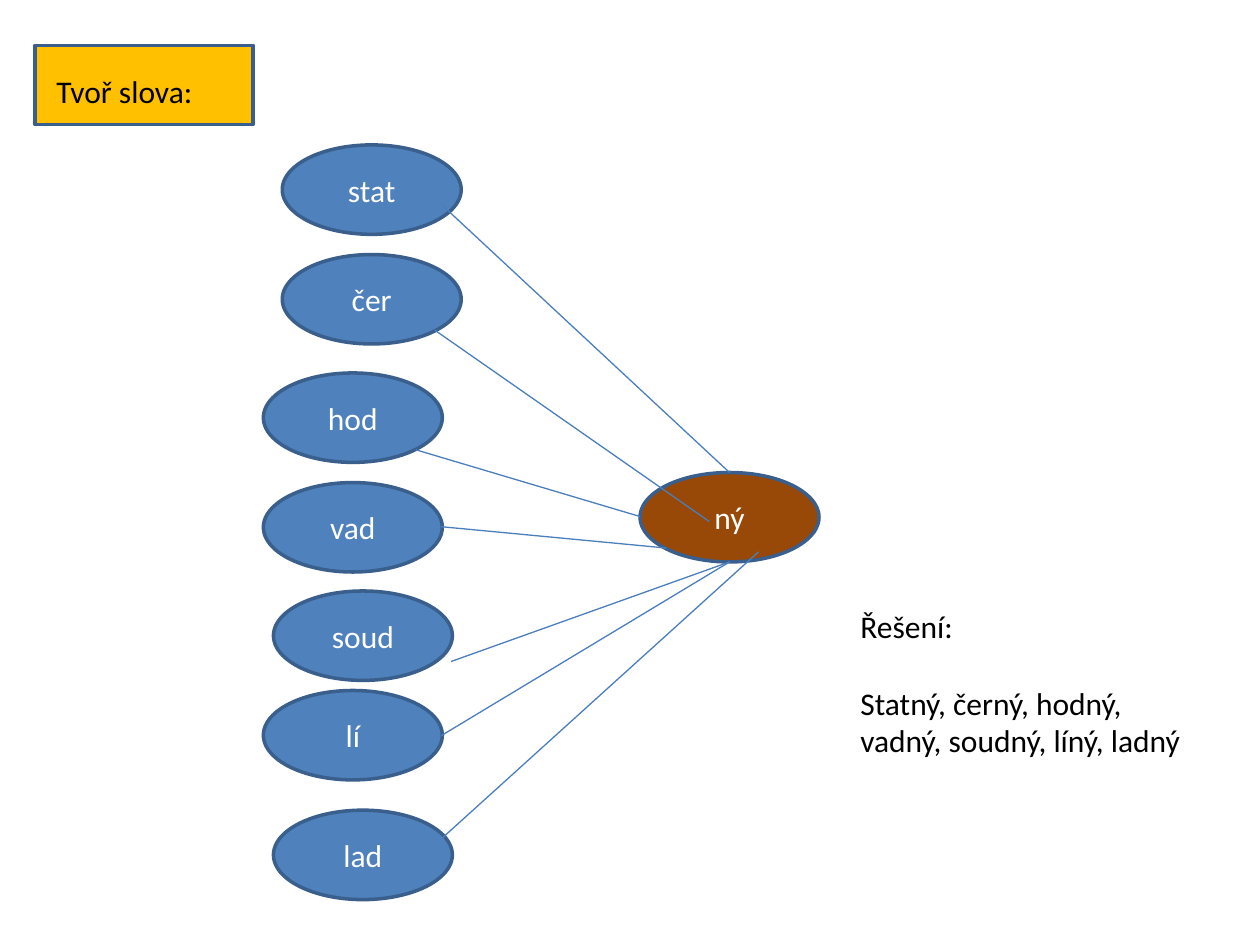
from lxml import etree
from pptx import Presentation
from pptx import util as u
from pptx.dml.color import RGBColor
from pptx.enum import shapes, text
from pptx.oxml import ns

Inches, Pt = u.Inches, u.Pt
COLORS = {
    "label": "FFC000",
    "stem": "4F81BD",
    "ending": "984807",
    "outline": "3A5F8C",
    "link": "4B7EBC",
    "dark": "000000",
    "light": "FFFFFF",
}
OVAL_WIDTH, OVAL_HEIGHT = 1.42, 0.71


def add_filled(kind, left, top, width, height, fill):
    figure = slide.shapes.add_shape(
        kind, Inches(left), Inches(top), Inches(width), Inches(height))
    figure.shadow.inherit = False
    figure.fill.solid()
    figure.fill.fore_color.rgb = RGBColor.from_string(COLORS[fill])
    figure.line.color.rgb = RGBColor.from_string(COLORS["outline"])
    figure.line.width = Pt(2)
    return figure


def add_words(paragraph, words, color):
    run = paragraph.add_run()
    run.text = words
    run.font.name = "Calibri"
    run.font.size = Pt(18)
    run.font.color.rgb = RGBColor.from_string(COLORS[color])


prs = Presentation()
prs.slide_width, prs.slide_height = Inches(10), Inches(7.5)
slide = prs.slides.add_slide(prs.slide_layouts[6])

add_filled(shapes.MSO_SHAPE.RECTANGLE, 0.28, 0.36, 1.73, 0.63, "label")

ovals = [
    ("stat", 2.24, 1.15, "stem"),
    ("čer", 2.24, 2.02, "stem"),
    ("hod", 2.09, 2.96, "stem"),
    ("ný", 5.08, 3.75, "ending"),
    ("vad", 2.09, 3.83, "stem"),
    ("soud", 2.17, 4.69, "stem"),
    ("lí", 2.09, 5.48, "stem"),
    ("lad", 2.17, 6.43, "stem"),
]
for syllable, left, top, fill in ovals:
    oval = add_filled(
        shapes.MSO_SHAPE.OVAL, left, top, OVAL_WIDTH, OVAL_HEIGHT, fill)
    oval.text_frame.vertical_anchor = text.MSO_ANCHOR.MIDDLE
    paragraph = oval.text_frame.paragraphs[0]
    paragraph.alignment = text.PP_ALIGN.CENTER
    add_words(paragraph, syllable, "light")

links = [
    (3.5, 1.62, 5.79, 3.75),
    (3.45, 2.62, 5.63, 4.14),
    (3.3, 3.57, 5.08, 4.1),
    (3.5, 4.18, 5.29, 4.35),
    (3.58, 5.25, 5.79, 4.46),
    (3.5, 5.84, 5.79, 4.46),
    (3.5, 6.66, 6.02, 4.38),
]
for ends in links:
    link = slide.shapes.add_connector(
        shapes.MSO_CONNECTOR.STRAIGHT, *[Inches(end) for end in ends])
    link.line.color.rgb = RGBColor.from_string(COLORS["link"])
    link.line.width = Pt(0.75)
    etree.SubElement(link._element.spPr, ns.qn("a:effectLst"))

passages = [
    (0.35, 0.52, 2.83, 0.4, ["Tvoř slova:"]),
    (6.73, 4.77, 2.91, 1.31,
     ["Řešení:", "Statný, černý, hodný, vadný, soudný, líný, ladný"]),
]
for left, top, width, height, lines in passages:
    passage = slide.shapes.add_textbox(
        Inches(left), Inches(top), Inches(width), Inches(height))
    frame = passage.text_frame
    frame.word_wrap = True
    for index, words in enumerate(lines):
        paragraph = frame.add_paragraph() if index else frame.paragraphs[0]
        if index:
            paragraph.space_before = Pt(22)
        add_words(paragraph, words, "dark")

prs.save("out.pptx")
